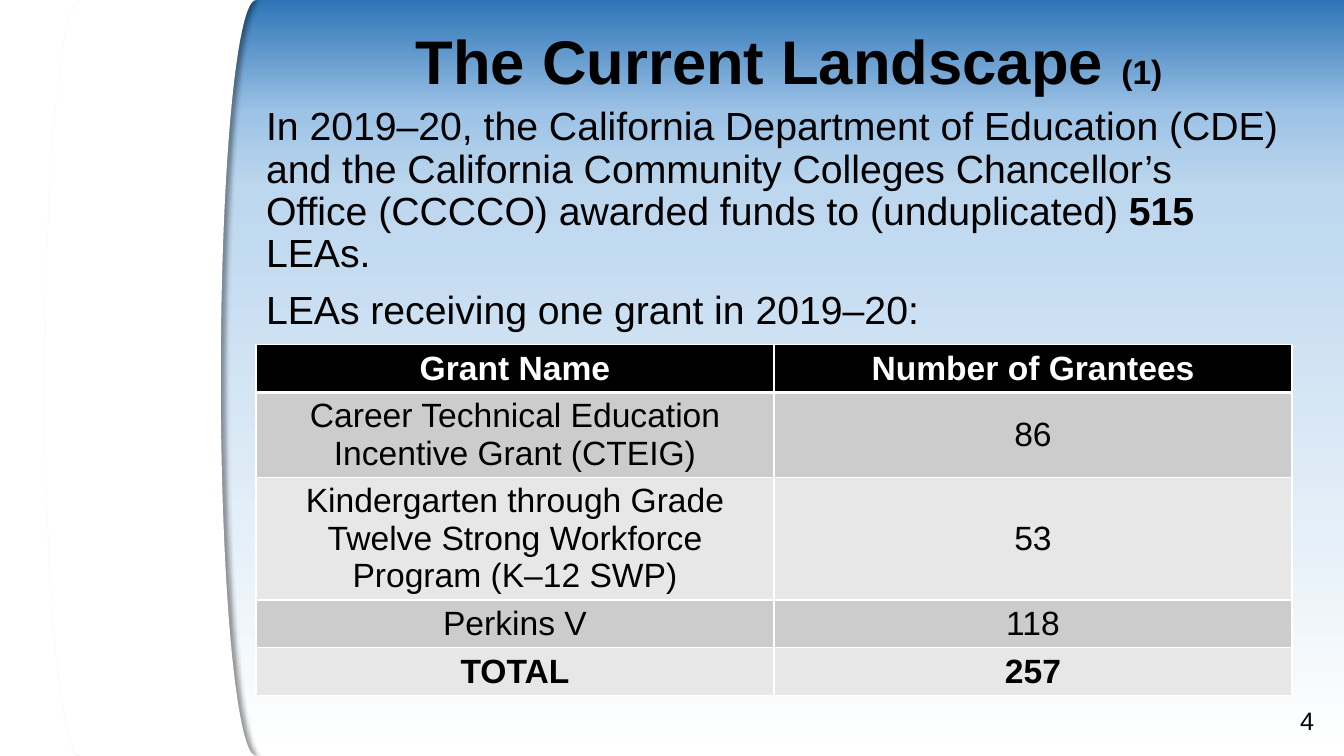
from pptx import Presentation
from pptx.dml.color import RGBColor as RGB
from pptx.enum.shapes import MSO_SHAPE as Kind
from pptx.enum.text import MSO_ANCHOR as Anchor, MSO_AUTO_SIZE as Fit, PP_ALIGN as Align
from pptx.oxml import parse_xml
from pptx.oxml.ns import nsdecls
from pptx.util import Cm, Pt

# Content: each paragraph is a list of (text, format) runs
TITLE = [[("The Current Landscape ", {}), ("(1)", {"size": "note"})]]
BODY = [
    [("In 2019–20, the California Department of Education (CDE) and the "
      "California Community Colleges Chancellor’s Office (CCCCO) awarded "
      "funds to (unduplicated) ", {}), ("515", {"bold": True}), (" LEAs.", {})],
    [("LEAs receiving one grant in 2019–20:", {})],
]
PAGE = [[("4", {})]]
GRANTS = [
    ("Grant Name", "Number of Grantees"),
    ("Career Technical Education Incentive Grant (CTEIG)", "86"),
    ("Kindergarten through Grade Twelve Strong Workforce Program (K–12 SWP)", "53"),
    ("Perkins V", "118"),
    ("TOTAL", "257"),
]

THEME = {
    "font": "Arial",
    "title": 44, "body": 28, "note": 24, "cell": 24, "page": 18,
    "ink": "000000", "paper": "FFFFFF", "bands": ("E7E7E7", "CCCCCC"),
    "sky": [(0, "2E75B6"), (15, "9DC3E6"), (25, "BDD7EE"), (100, "FFFFFF")],
}

# Left, top, width, height in cm
WIDE, HIGH = 33.87, 19.05
EDGE, SPAN = 6.45, 26.11
BOXES = {
    "strip": (0, 0, 2.95, HIGH),
    "curve": (1.14, 0, 5.31, HIGH),
    "title": (EDGE, 0.1, 26.87, 3.05),
    "body": (EDGE, 2.57, SPAN, 6.07),
    "grid": (EDGE, 8.69, SPAN, 5.2),
    "page": (31.19, 17.65, 2.18, 1.02),
}


def place(name):
    return [Cm(v) for v in BOXES[name]]


def style(font, size, color="ink", bold=False):
    look = {"name": THEME["font"], "size": Pt(THEME[size]), "bold": bold}
    for key, value in look.items():
        setattr(font, key, value)
    font.color.rgb = RGB.from_string(THEME[color])


def write(frame, paras, base, **form):
    """Fill a text frame with runs; form holds paragraph settings."""
    for i, runs in enumerate(paras):
        para = frame.add_paragraph() if i else frame.paragraphs[0]
        for key, value in form.items():
            setattr(para, key, value)
        if not i:
            para.space_before = Pt(0)
        for text, extra in runs:
            run = para.add_run()
            run.text = text
            style(run.font, **{**base, **extra})


def seat(shape, name, anchor):
    """Move a placeholder to its box and fix its frame."""
    for key, value in zip(("left", "top", "width", "height"), place(name)):
        setattr(shape, key, value)
    frame = shape.text_frame
    frame.word_wrap, frame.auto_size = True, Fit.NONE
    frame.vertical_anchor = anchor
    return frame


def paint(slide):
    """Give the slide its vertical gradient."""
    stops = "".join(f'<a:gs pos="{pos * 1000}"><a:srgbClr val="{tint}"/></a:gs>'
                    for pos, tint in THEME["sky"])
    slide.element.cSld.insert(0, parse_xml(
        f'<p:bg {nsdecls("p", "a")}><p:bgPr><a:gradFill rotWithShape="1">'
        f'<a:gsLst>{stops}</a:gsLst><a:lin ang="5400000" scaled="0"/>'
        '</a:gradFill><a:effectLst/></p:bgPr></p:bg>'))


def panel(slide, kind, name):
    shape = slide.shapes.add_shape(kind, *place(name))
    shape.shadow.inherit = False
    shape.fill.solid()
    shape.fill.fore_color.rgb = RGB.from_string(THEME["paper"])
    shape.line.fill.background()
    return shape


def shade(shape):
    """Cast a soft shadow to the right."""
    props = shape.element.spPr
    props.effectLst.append(parse_xml(
        f'<a:outerShdw {nsdecls("a")} blurRad="{Pt(4)}" dist="{Pt(3)}" dir="0" '
        f'algn="l" rotWithShape="0"><a:srgbClr val="{THEME["ink"]}">'
        '<a:alpha val="40000"/></a:srgbClr></a:outerShdw>'))


def frame_cell(cell, widths):
    props = cell._tc.get_or_add_tcPr()
    for side, width in widths.items():
        props.append(parse_xml(
            f'<a:ln{side} {nsdecls("a")} w="{Pt(width)}"><a:solidFill>'
            f'<a:srgbClr val="{THEME["paper"]}"/></a:solidFill></a:ln{side}>'))


def tabulate(slide):
    rows, cols = len(GRANTS), len(GRANTS[0])
    table = slide.shapes.add_table(rows, cols, *place("grid")).table
    table.horz_banding = False
    for r, row in enumerate(GRANTS):
        head, total = r == 0, r == rows - 1
        tint = THEME["ink"] if head else THEME["bands"][r % 2]
        base = {"size": "cell", "color": "paper" if head else "ink",
                "bold": head or total}
        for c, text in enumerate(row):
            cell = table.cell(r, c)
            frame_cell(cell, {"L": 1, "R": 1, "T": 3 if r == 1 else 1,
                              "B": 3 if head else 1})
            cell.fill.solid()
            cell.fill.fore_color.rgb = RGB.from_string(tint)
            cell.vertical_anchor = Anchor.MIDDLE
            write(cell.text_frame, [[(text, {})]], base, alignment=Align.CENTER)


def main():
    deck = Presentation()
    deck.slide_width, deck.slide_height = Cm(WIDE), Cm(HIGH)
    slide = deck.slides.add_slide(deck.slide_layouts[1])
    paint(slide)
    panel(slide, Kind.RECTANGLE, "strip")
    shade(panel(slide, Kind.FLOWCHART_STORED_DATA, "curve"))

    head, body = slide.placeholders
    write(seat(head, "title", Anchor.MIDDLE), TITLE,
          {"size": "title", "bold": True}, alignment=Align.CENTER, line_spacing=0.9)
    text = seat(body, "body", Anchor.TOP)
    write(text, BODY, {"size": "body"}, alignment=Align.LEFT,
          line_spacing=0.9, space_before=Pt(10))
    for para in text.paragraphs:
        props = para._p.get_or_add_pPr()
        props.set("marL", "0")
        props.set("indent", "0")
        props.append(parse_xml(f'<a:buNone {nsdecls("a")}/>'))

    tabulate(slide)
    page = slide.shapes.add_textbox(*place("page")).text_frame
    page.word_wrap = True
    write(page, PAGE, {"size": "page"}, alignment=Align.RIGHT)
    deck.save("out.pptx")


if __name__ == "__main__":
    main()
